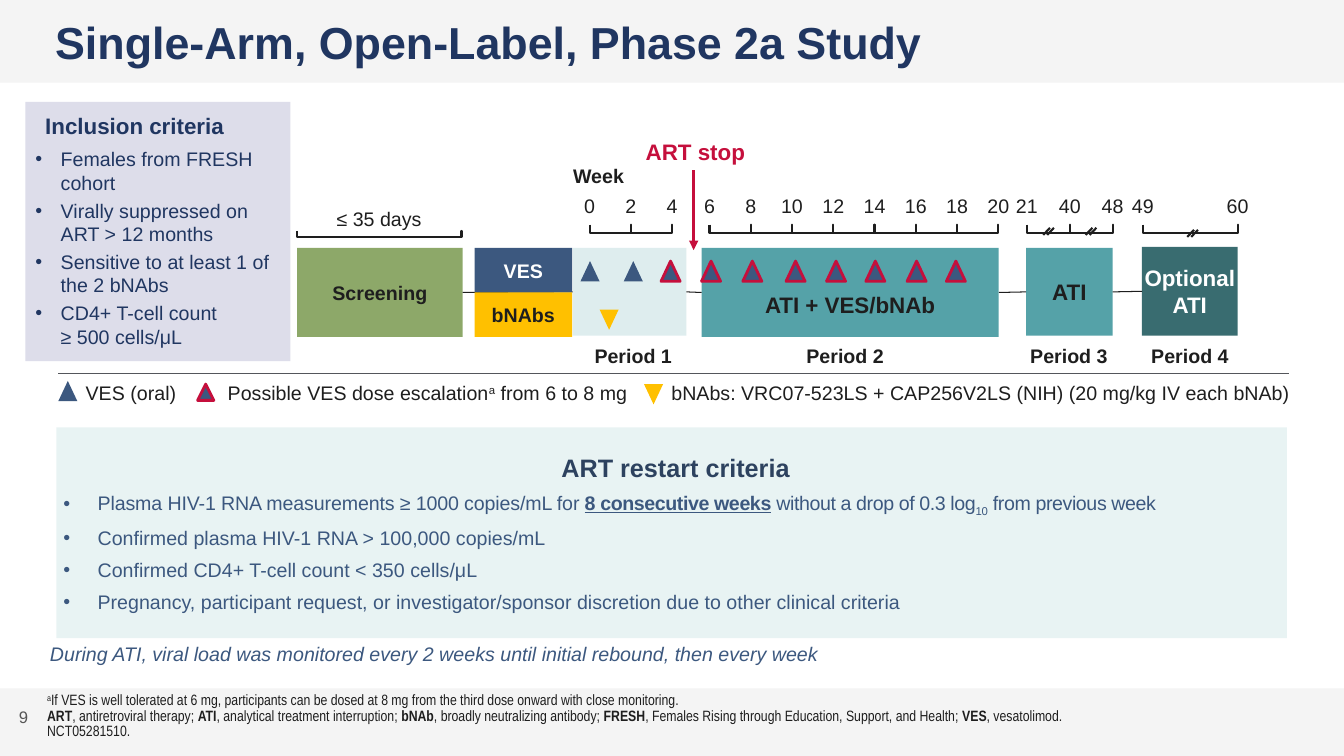
from dataclasses import dataclass

from lxml.etree import SubElement
from pptx import Presentation
from pptx.dml.color import RGBColor
from pptx.enum.shapes import MSO_CONNECTOR, MSO_SHAPE
from pptx.enum.text import MSO_ANCHOR, MSO_AUTO_SIZE, PP_ALIGN
from pptx.oxml.ns import qn
from pptx.util import Cm, Pt

COLORS = {
    "band": "F4F4F4", "title": "203661", "ink": "1E1E1E", "grey": "565656", "rule": "54565B",
    "white": "FFFFFF", "red": "C50F3C", "blue": "3C587F", "yellow": "FFC000", "green": "688C38",
    "mist": "D1E6E8", "teal": "55A2A8", "deep": "396C70", "lilac": "DDDDEA", "pale": "E8F3F3",
    "slate": "2D425F",
}


@dataclass
class Part:
    text: str
    bold: bool | None = None
    underline: bool | None = None
    baseline: int = 0
    spacing: int = 0


@dataclass
class Style:
    size: float = 14
    color: str = "ink"
    bold: bool = False
    italic: bool = False
    align: PP_ALIGN = PP_ALIGN.LEFT
    name: str = "Arial"


@dataclass
class Block:
    text: str
    left: float
    width: float
    fill: str
    style: Style
    top: float = 6.25
    height: float = 2.24
    alpha: int = 100
    inset_top: float = 0.18
    caption: str = ""
    caption_x: float = 0


@dataclass
class Ruler:
    start: float
    step: float
    weeks: list[int]


CENTER = Style(align=PP_ALIGN.CENTER)
CENTER_BOLD = Style(bold=True, align=PP_ALIGN.CENTER)
LARGE = Style(16, bold=True, align=PP_ALIGN.CENTER)
LARGE_WHITE = Style(16, "white", True, align=PP_ALIGN.CENTER)

PHASES = [
    Block("Screening", 7.49, 4.17, "green", CENTER_BOLD, alpha=75),
    Block("", 14.43, 2.87, "mist", CENTER, height=2.21, alpha=70, caption="Period 1", caption_x=15.96),
    Block("ATI + VES/bNAb", 17.68, 7.49, "teal", LARGE, inset_top=0.77, caption="Period 2", caption_x=21.3),
    Block("ATI", 25.86, 2.18, "teal", LARGE, height=2.21, caption="Period 3", caption_x=26.94),
    Block("Optional ATI", 28.78, 2.41, "deep", LARGE_WHITE, top=6.22, caption="Period 4", caption_x=29.99),
]
DRUGS = [
    Block("VES", 11.96, 2.46, "blue", Style(14, "white", True, align=PP_ALIGN.CENTER), height=1.12),
    Block("bNAbs", 11.96, 2.46, "yellow", CENTER_BOLD, top=7.37, height=1.12),
]
RULERS = [
    Ruler(14.86, 1.04, [0, 2, 4]),
    Ruler(17.88, 1.04, list(range(6, 21, 2))),
    Ruler(25.88, 1.08, [21, 40, 48]),
    Ruler(28.8, 2.39, [49, 60]),
]
BREAKS = [(26.29, 5.92), (27.36, 5.92), (29.92, 5.97)]
DOSE_CENTERS = [14.87, 15.96, 16.9, 17.92, 18.96, 20.05, 21.07, 22.06, 23.1, 24.09]
FIRST_ESCALATION = 2

INCLUSION = [
    [Part("Females from FRESH cohort")],
    [Part("Virally suppressed on ART > 12 months")],
    [Part("Sensitive to at least 1 of the 2 bNAbs")],
    [Part("CD4+ T-cell count "), Part("\v"), Part("≥ 500 cells/μL")],
]
RESTART = [
    [Part("Plasma HIV-1 RNA measurements ≥ 1000 copies/mL for ", spacing=-10),
     Part("8 consecutive weeks", True, True, spacing=-30),
     Part(" without a drop of 0.3 log", spacing=-30), Part("10", baseline=-25000, spacing=-30),
     Part(" from previous week", spacing=-30)],
    [Part("Confirmed plasma HIV-1 RNA > 100,000 copies/mL")],
    [Part("Confirmed CD4+ T-cell count < 350 cells/μL")],
    [Part("Pregnancy, participant request, or investigator/sponsor discretion due to other clinical criteria")],
]
FOOTNOTES = [
    [Part("a", baseline=30000),
     Part("If VES is well tolerated at 6 mg, participants can be dosed at 8 mg from the third dose onward "
          "with close monitoring.")],
    [Part("ART", True), Part(", antiretroviral therapy; "), Part("ATI", True),
     Part(", analytical treatment interruption; "), Part("bNAb", True),
     Part(", broadly neutralizing antibody; "), Part("FRESH", True),
     Part(", Females Rising through Education, Support, and Health; "), Part("VES", True),
     Part(", vesatolimod.")],
    [Part("NCT05281510.")],
]


def rgb(name: str) -> RGBColor:
    return RGBColor.from_string(COLORS[name])


def paint(shape, fill: str, alpha: int = 100) -> None:
    shape.fill.solid()
    shape.fill.fore_color.rgb = rgb(fill)
    if alpha < 100:
        color = shape._element.spPr.find(qn("a:solidFill"))[0]
        SubElement(color, qn("a:alpha")).set("val", str(alpha * 1000))


def write(paragraph, parts: list[Part], style: Style) -> None:
    for part in parts:
        if part.text == "\v":
            paragraph.add_line_break()
            continue
        run = paragraph.add_run()
        run.text = part.text
        run.font.bold, run.font.underline = part.bold, part.underline
        for key, value in (("baseline", part.baseline), ("spc", part.spacing)):
            if value:
                run._r.get_or_add_rPr().set(key, str(value))
    font = paragraph.font
    font.name, font.size, font.bold, font.italic = style.name, Pt(style.size), style.bold, style.italic
    font.color.rgb = rgb(style.color)
    paragraph.alignment = style.align
    paragraph.space_before = paragraph.space_after = Pt(0)


def prepare_frame(shape, insets=(0, 0, 0, 0), anchor=MSO_ANCHOR.MIDDLE):
    """Insets run left, top, right, bottom."""
    frame = shape.text_frame
    frame.word_wrap, frame.auto_size, frame.vertical_anchor = True, MSO_AUTO_SIZE.NONE, anchor
    frame.margin_left, frame.margin_top, frame.margin_right, frame.margin_bottom = map(Cm, insets)
    return frame


def place(shape, left: float, top: float, width: float, height: float) -> None:
    shape.left, shape.top, shape.width, shape.height = map(Cm, (left, top, width, height))


def indent(paragraph, margin: float, first: float = 0) -> None:
    properties = paragraph._p.get_or_add_pPr()
    properties.set("marL", str(Cm(margin)))
    properties.set("indent", str(Cm(first)))


def add_text(slide, parts: list[Part], box: tuple, style: Style):
    frame = prepare_frame(slide.shapes.add_textbox(*map(Cm, box)))
    write(frame.paragraphs[0], parts, style)
    return frame


def add_figure(slide, kind: MSO_SHAPE, box: tuple, fill: str, alpha: int = 100):
    shape = slide.shapes.add_shape(kind, *map(Cm, box))
    shape.shadow.inherit = False
    paint(shape, fill, alpha)
    shape.line.fill.background()
    return shape


def add_dose(slide, left: float, top: float, escalated=False, bnab=False, size=(0.48, 0.51)) -> None:
    fill = "yellow" if bnab else "blue"
    triangle = add_figure(slide, MSO_SHAPE.ISOSCELES_TRIANGLE, (left, top, *size), fill)
    triangle.rotation = 180 if bnab else 0
    if escalated:
        triangle.line.color.rgb, triangle.line.width = rgb("red"), Pt(2)


def add_block(slide, block: Block):
    box = (block.left, block.top, block.width, block.height)
    shape = add_figure(slide, MSO_SHAPE.RECTANGLE, box, block.fill, block.alpha)
    if block.text:
        frame = prepare_frame(shape, (0, block.inset_top, 0, 0.18))
        write(frame.paragraphs[0], [Part(block.text)], block.style)
    if block.caption:
        add_text(slide, [Part(block.caption)], (block.caption_x - 1.2, 8.59, 2.4, 0.76), CENTER_BOLD)
    return shape


def add_line(slide, start: tuple, end: tuple, color: str = "ink", width: float = 1.5):
    line = slide.shapes.add_connector(MSO_CONNECTOR.STRAIGHT, *map(Cm, (*start, *end)))
    line.line.color.rgb, line.line.width = rgb(color), Pt(width)
    SubElement(line._element.spPr, qn("a:effectLst"))
    return line


def add_bracket(slide, ticks: list[float], top: float = 5.66, bottom: float = 5.87) -> None:
    """Draw a bar with an upward tick at each given position."""
    builder = slide.shapes.build_freeform(Cm(ticks[0]), Cm(top))
    points = [(ticks[0], bottom)]
    for tick in ticks[1:]:
        points += [(tick, bottom), (tick, top), (tick, bottom)]
    builder.add_line_segments([(Cm(x), Cm(y)) for x, y in points], close=False)
    bracket = builder.convert_to_shape()
    bracket.shadow.inherit = False
    bracket.fill.background()
    bracket.line.color.rgb, bracket.line.width = rgb("ink"), Pt(1.5)


def fill_list(frame, heading: str, heading_style: Style, heading_indent: float, items: list,
              item_style: Style, hanging: tuple, before: float, after: float) -> None:
    title = frame.paragraphs[0]
    write(title, [Part(heading)], heading_style)
    indent(title, heading_indent)
    SubElement(title._p.pPr, qn("a:buNone"))
    title._p.pPr.insert_element_before(title._p.pPr[-1], "a:defRPr")
    for parts in items:
        paragraph = frame.add_paragraph()
        write(paragraph, parts, item_style)
        indent(paragraph, *hanging)
        paragraph.space_before, paragraph.space_after = Pt(before), Pt(after)


def add_timeline(slide) -> None:
    shapes = [add_block(slide, block) for block in PHASES]
    for left, right in zip(shapes, shapes[1:]):
        link = add_line(slide, (0, 0), (1, 1), width=0.75)
        link.begin_connect(left, 3)
        link.end_connect(right, 1)
    for block in DRUGS:
        add_block(slide, block)
    add_bracket(slide, [7.49, 11.63], 5.82, 5.97)
    add_text(slide, [Part("≤ 35 days")], (7.47, 5.13, 4.17, 0.74), CENTER)
    add_text(slide, [Part("Week")], (14.12, 4.04, 1.93, 0.76), CENTER_BOLD)
    for ruler in RULERS:
        ticks = [ruler.start + ruler.step * index for index in range(len(ruler.weeks))]
        add_bracket(slide, ticks)
        for tick, week in zip(ticks, ruler.weeks):
            add_text(slide, [Part(str(week))], (tick - 0.47, 4.93, 0.94, 0.51), CENTER)
    for x, y in BREAKS:
        for start in (x, x + 0.1):
            add_line(slide, (start, y), (start + 0.17, y - 0.18))
    for index, center in enumerate(DOSE_CENTERS):
        add_dose(slide, center - 0.24, 6.58, escalated=index >= FIRST_ESCALATION)
    add_dose(slide, 15.11, 7.8, bnab=True)
    arrow = add_line(slide, (17.48, 4.29), (17.48, 6.3), "red", 2.25)
    SubElement(arrow.line._get_or_add_ln(), qn("a:tailEnd")).set("type", "triangle")
    add_text(slide, [Part("ART stop")], (15.95, 3.45, 3.15, 0.76), Style(16, "red", True, align=PP_ALIGN.CENTER))


def add_legend(slide) -> None:
    add_line(slide, (1.47, 9.4), (32.49, 9.4), "rule", 0.5)
    add_dose(slide, 1.47, 9.6)
    add_dose(slide, 4.98, 9.68, escalated=True, size=(0.41, 0.41))
    add_dose(slide, 16.23, 9.68, bnab=True)
    escalation = [Part("Possible VES dose escalation"), Part("a", baseline=30000), Part(" from 6 to 8 mg")]
    bnabs = [Part("bNAbs: VRC07-523LS + CAP256V2LS (NIH) (20 mg/kg IV each bNAb)")]
    for left, width, parts in ((2.16, 2.49, [Part("VES (oral)")]), (5.74, 10.4, escalation), (16.92, 16.56, bnabs)):
        add_text(slide, parts, (left, 9.51, width, 0.76), Style())


def add_footer(slide) -> None:
    add_figure(slide, MSO_SHAPE.RECTANGLE, (0, 17.35, 33.87, 1.7), "band")
    add_text(slide, [Part("9")], (0, 17.48, 1.19, 1.19), Style(11.9, "grey", align=PP_ALIGN.CENTER))
    style = Style(10.7, name="Arial Narrow")
    frame = add_text(slide, FOOTNOTES[0], (1.19, 17.65, 31.29, 0.81), style)
    for parts in FOOTNOTES[1:]:
        write(frame.add_paragraph(), parts, style)
    for paragraph in frame.paragraphs:
        paragraph.line_spacing = 0.85


def main() -> None:
    presentation = Presentation()
    presentation.slide_width, presentation.slide_height = Cm(33.87), Cm(19.05)
    slide = presentation.slides.add_slide(presentation.slide_layouts[3])
    title, inclusion, restart = (slide.placeholders[index] for index in range(3))
    place(title, 0, 0, 33.87, 2.08)
    paint(title, "band")
    heading = prepare_frame(title, (0.25, 0, 0, 0)).paragraphs[0]
    write(heading, [Part("Single-Arm, Open-Label, Phase 2a Study")], Style(32, "title", True))
    indent(heading, 1.14)
    place(inclusion, 0.64, 2.57, 6.68, 6.53)
    paint(inclusion, "lilac")
    fill_list(prepare_frame(inclusion, (0.25,) * 4, MSO_ANCHOR.TOP), "Inclusion criteria",
              Style(16, "title", True), 0.25, INCLUSION, Style(14, "title"), (0.64, -0.64), 0, 3)
    inclusion.text_frame.paragraphs[0].space_after = Pt(6)
    place(restart, 1.42, 10.77, 31.01, 5.31)
    paint(restart, "pale")
    fill_list(prepare_frame(restart), "ART restart criteria", Style(18, "slate", True, align=PP_ALIGN.CENTER),
              0.2, RESTART, Style(14, "blue"), (1.04, -0.86), 6, 0)
    restart.text_frame.paragraphs[-1].space_after = Pt(6)
    add_timeline(slide)
    add_legend(slide)
    add_text(slide, [Part("During ATI, viral load was monitored every 2 weeks until initial rebound, then every week")],
             (1.26, 16.05, 21, 0.86), Style(14, "blue", italic=True))
    add_footer(slide)
    presentation.save("out.pptx")


if __name__ == "__main__":
    main()
